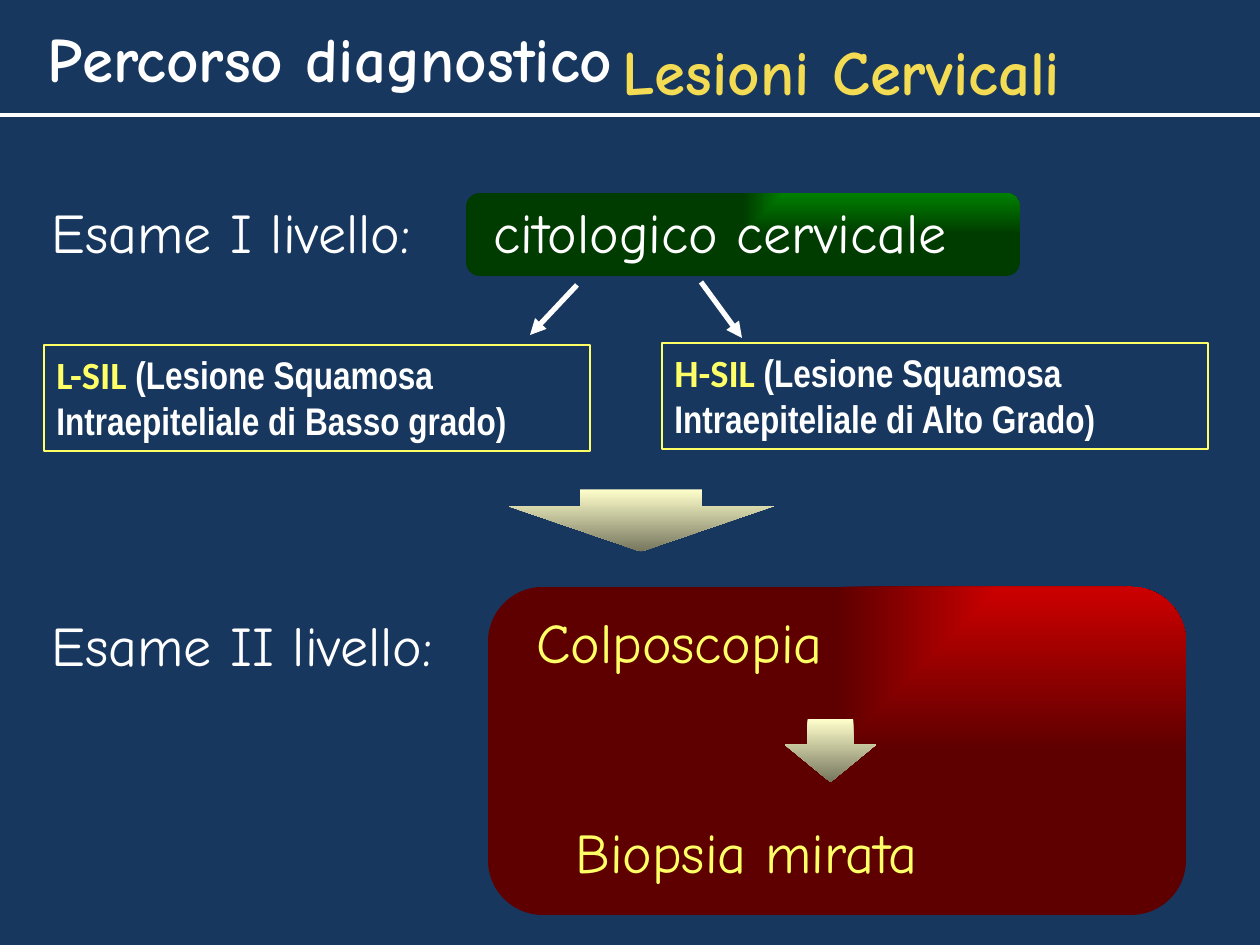
from dataclasses import dataclass

from lxml.etree import SubElement
from pptx import Presentation
from pptx.dml.color import RGBColor
from pptx.enum.shapes import MSO_CONNECTOR, MSO_SHAPE
from pptx.enum.text import MSO_ANCHOR, MSO_AUTO_SIZE
from pptx.oxml.ns import qn
from pptx.util import Pt

EMU_PER_PX = 914400 / 126


@dataclass(frozen=True)
class Theme:
    background: str = "17375E"
    white: str = "FFFFFF"
    yellow: str = "FFFF66"
    gold: str = "F3DC53"
    green: tuple = ("008000", "003B00")
    red: tuple = ("CC0000", "5E0000")
    cream: tuple = ("FFFFCC", "76765E")
    display_font: str = "Comic Neue"
    title_size: int = 36
    label_size: int = 32
    result_size: int = 22


THEME = Theme()


def px(*lengths):
    return [round(length * EMU_PER_PX) for length in lengths]


def rgb(code):
    return RGBColor.from_string(code)


def add_run(paragraph, text, size, color, font=THEME.display_font, bold=False):
    run = paragraph.add_run()
    run.text = text
    formats = {"name": font, "size": Pt(size), "bold": bold}
    for name, value in formats.items():
        setattr(run.font, name, value)
    run.font.color.rgb = rgb(color)


def add_text(slide, box, text, color=THEME.white, size=THEME.label_size, bold=False,
             **frame_formats):
    frame = slide.shapes.add_textbox(*px(*box)).text_frame
    formats = {"word_wrap": True, "auto_size": MSO_AUTO_SIZE.SHAPE_TO_FIT_TEXT}
    for name, value in (formats | frame_formats).items():
        setattr(frame, name, value)
    add_run(frame.paragraphs[0], text, size, color, bold=bold)


def add_result(slide, left, top, code, meaning):
    """Outlined box with a highlighted code and its meaning."""
    shape = slide.shapes.add_textbox(*px(left, top, 546, 106))
    shape.line.color.rgb = rgb(THEME.yellow)
    shape.line.width = Pt(0.75)
    frame = shape.text_frame
    frame.word_wrap = True
    frame.auto_size = MSO_AUTO_SIZE.SHAPE_TO_FIT_TEXT
    paragraph = frame.paragraphs[0]
    add_run(paragraph, code + " ", THEME.result_size, THEME.yellow, "Calibri", True)
    add_run(paragraph, meaning, THEME.result_size, THEME.white, "Arial Narrow", True)


def add_gradient_shape(slide, kind, box, colors, adjustments, angle=None, rotation=0):
    """Shape with a linear gradient, or one from the top right corner without an angle."""
    shape = slide.shapes.add_shape(kind, *px(*box))
    shape.shadow.inherit = False
    shape.line.fill.background()
    shape.rotation = rotation
    for index, value in enumerate(adjustments):
        shape.adjustments[index] = value
    shape.fill.gradient()
    for stop, color in zip(shape.fill.gradient_stops, colors):
        stop.color.rgb = rgb(color)
    if angle is not None:
        shape.fill.gradient_angle = -angle % 360
        return
    gradient = shape.element.spPr.find(qn("a:gradFill"))
    gradient.remove(gradient.find(qn("a:lin")))
    corner = SubElement(gradient, qn("a:path"), {"path": "rect"})
    SubElement(corner, qn("a:fillToRect"), {"l": "100000", "b": "100000"})


def add_line(slide, ends, width, arrow=False):
    line = slide.shapes.add_connector(MSO_CONNECTOR.STRAIGHT, *px(*ends))
    line.line.color.rgb = rgb(THEME.white)
    line.line.width = Pt(width)
    if arrow:
        SubElement(line.line._get_or_add_ln(), qn("a:tailEnd"), {"type": "triangle"})
    SubElement(line.element.spPr, qn("a:effectLst"))


def main():
    presentation = Presentation()
    presentation.slide_width, presentation.slide_height = px(1260, 945)
    slide = presentation.slides.add_slide(presentation.slide_layouts[6])
    slide.background.fill.solid()
    slide.background.fill.fore_color.rgb = rgb(THEME.background)

    # Heading
    add_line(slide, (-2, 115, 1268, 115), 2.25)
    add_text(slide, (35, 13, 449, 103), "Percorso diagnostico", size=THEME.title_size,
             bold=True, word_wrap=False, auto_size=MSO_AUTO_SIZE.NONE)
    add_text(slide, (610, 35, 600, 71), "Lesioni Cervicali", THEME.gold, THEME.title_size,
             bold=True, auto_size=MSO_AUTO_SIZE.NONE, vertical_anchor=MSO_ANCHOR.MIDDLE)

    # First level: smear test
    add_gradient_shape(slide, MSO_SHAPE.ROUNDED_RECTANGLE, (466, 193, 554, 83),
                       THEME.green, [0.167])
    add_text(slide, (39, 191, 461, 79), "Esame I livello:")
    add_text(slide, (481, 191, 546, 79), "citologico cervicale")

    # Its two results
    add_line(slide, (577, 285, 530, 335), 3, arrow=True)
    add_line(slide, (701, 282, 742, 338), 3, arrow=True)
    add_result(slide, 44, 345, "L-SIL", "(Lesione Squamosa Intraepiteliale di Basso grado)")
    add_result(slide, 662, 343, "H-SIL", "(Lesione Squamosa Intraepiteliale di Alto Grado)")
    add_gradient_shape(slide, MSO_SHAPE.RIGHT_ARROW, (610, 388, 62, 265),
                       THEME.cream, [0.46, 0.73], angle=0, rotation=90)

    # Second level: colposcopy, then biopsy
    add_gradient_shape(slide, MSO_SHAPE.ROUNDED_RECTANGLE, (488, 587, 698, 328),
                       THEME.red, [0.167])
    add_text(slide, (39, 604, 461, 79), "Esame II livello:")
    add_text(slide, (524, 601, 384, 79), "Colposcopia", THEME.yellow)
    add_gradient_shape(slide, MSO_SHAPE.DOWN_ARROW, (785, 719, 91, 63),
                       THEME.cream, [0.5, 0.59], angle=90)
    add_text(slide, (563, 811, 544, 79), "Biopsia mirata", THEME.yellow)

    presentation.save("out.pptx")


if __name__ == "__main__":
    main()
